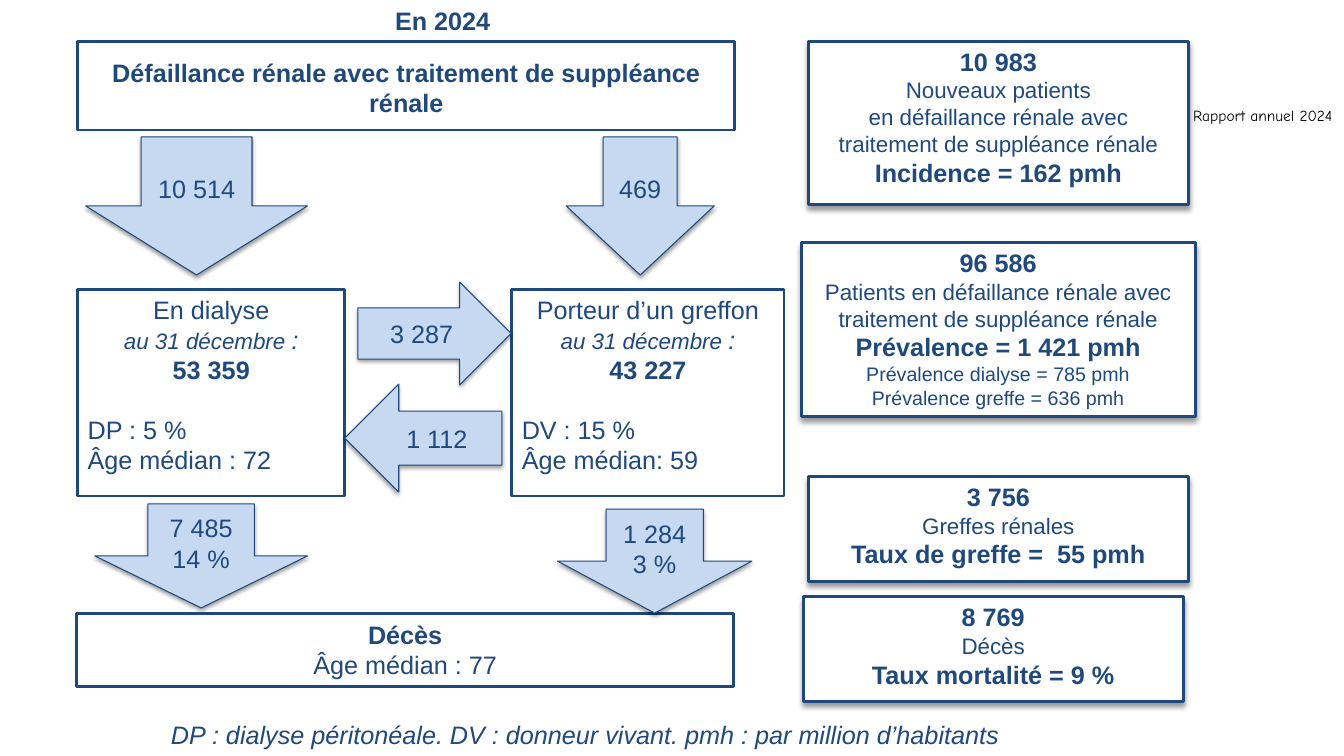
from lxml import etree
from pptx import Presentation
from pptx import util as u
from pptx.dml.color import RGBColor
from pptx.enum import shapes, text
from pptx.oxml.ns import qn

NAVY = RGBColor(0x1F, 0x49, 0x7D)
PALE = RGBColor(0xC6, 0xD9, 0xF1)
WHITE = RGBColor(0xFF, 0xFF, 0xFF)
BLACK = RGBColor(0, 0, 0)

# Run formats
BASE = dict(name="Arial", size=u.Pt(18), bold=False, italic=False)
FORMATS = {
    "plain": BASE,
    "bold": {**BASE, "bold": True},
    "italic": {**BASE, "italic": True},
    "date": {**BASE, "italic": True, "size": u.Pt(16)},
    "label": {**BASE, "size": u.Pt(16)},
    "detail": {**BASE, "size": u.Pt(14)},
    "report": {**BASE, "name": "Comic Neue", "size": u.Pt(11)},
}

# Content: places are (left, top, width, height) in cm, lines are (text, format)
TITLE = ((9.63, 0, 3.05, 1.09), "En 2024")
FOOTNOTE = ((4.06, 18.01, 23.11, 1.04),
            "DP : dialyse péritonéale. DV : donneur vivant. pmh : par million d’habitants")
REPORT = ((29.82, 2.54, 4.04, 0.74), "Rapport annuel 2024")

BANDS = [
    ((1.96, 1.04, 16.56, 2.24), 0.41,
     [("Défaillance rénale avec traitement de suppléance rénale", "bold")]),
    ((1.93, 15.47, 16.56, 1.83), 0.13,
     [("Décès", "bold"), ("Âge médian : 77", "plain")]),
]

# place, name, count on 31 December, remarks
TREATMENTS = [
    ((1.96, 7.29, 6.73, 5.21), "En dialyse", "53 359", ["DP : 5 %", "Âge médian : 72"]),
    ((12.9, 7.29, 6.86, 5.21), "Porteur d’un greffon", "43 227",
     ["DV : 15 %", "Âge médian: 59"]),
]

RIGHT, LEFT, DOWN = (shapes.MSO_SHAPE.RIGHT_ARROW, shapes.MSO_SHAPE.LEFT_ARROW,
                     shapes.MSO_SHAPE.DOWN_ARROW)
FLOWS = [
    (RIGHT, (9.02, 7.11, 3.86, 2.59), ["3 287"]),
    (LEFT, (8.69, 9.68, 3.96, 2.72), ["1 112"]),
    (DOWN, (14.27, 3.45, 3.73, 3.48), ["469"]),
    (DOWN, (2.16, 3.45, 5.59, 3.48), ["10 514"]),
    (DOWN, (14.05, 12.83, 4.9, 2.62), ["1 284", "3 %"]),
    (DOWN, (2.39, 12.7, 5.36, 2.62), ["7 485", "14 %"]),
]

# place, total, labels, rate, details
KEY_FIGURES = [
    ((20.37, 1.04, 9.58, 4.11), "10 983",
     ["Nouveaux patients", "en défaillance rénale avec traitement de suppléance rénale"],
     "Incidence = 162 pmh", []),
    ((20.19, 6.12, 9.93, 4.37), "96 586",
     ["Patients en défaillance rénale avec traitement de suppléance rénale"],
     "Prévalence = 1 421 pmh",
     ["Prévalence dialyse = 785 pmh", "Prévalence greffe = 636 pmh"]),
    ((20.37, 12.01, 9.58, 2.64), "3 756", ["Greffes rénales"],
     "Taux de greffe =  55 pmh", []),
    ((20.24, 15.04, 9.58, 2.64), "8 769", ["Décès"], "Taux mortalité = 9 %", []),
]


def cm(place):
    return [u.Cm(v) for v in place]


def write(p, runs, align=text.PP_ALIGN.CENTER, color=NAVY):
    p.alignment = align
    for words, style in runs:
        r = p.add_run()
        r.text = words
        for key, value in FORMATS[style].items():
            setattr(r.font, key, value)
        r.font.color.rgb = color


def fill_text(sp, paragraphs, anchor=text.MSO_ANCHOR.TOP, wrap=True, **look):
    tf = sp.text_frame
    tf.auto_size = text.MSO_AUTO_SIZE.NONE
    tf.word_wrap = wrap
    tf.vertical_anchor = anchor
    for i, runs in enumerate(paragraphs):
        write(tf.add_paragraph() if i else tf.paragraphs[0], runs, **look)
    return tf


def add_shadow(sp, alpha, blur, dist):
    effects = sp._element.spPr.find(qn("a:effectLst"))
    shadow = etree.SubElement(effects, qn("a:outerShdw"), blurRad=str(u.Pt(blur)),
                              dist=str(u.Pt(dist)), dir="5400000", rotWithShape="0")
    tint = etree.SubElement(shadow, qn("a:srgbClr"), val="000000")
    etree.SubElement(tint, qn("a:alpha"), val=str(alpha * 1000))


def add_box(s, place, kind=shapes.MSO_SHAPE.RECTANGLE, fill=WHITE, width=2, shadow=None):
    sp = s.shapes.add_shape(kind, *cm(place))
    sp.shadow.inherit = False
    sp.fill.solid()
    sp.fill.fore_color.rgb = fill
    sp.line.color.rgb = NAVY
    sp.line.width = u.Pt(width)
    if shadow:
        add_shadow(sp, *shadow)
    return sp


def main():
    prs = Presentation()
    prs.slide_width, prs.slide_height = u.Cm(33.87), u.Cm(19.05)
    s = prs.slides.add_slide(prs.slide_layouts[5])

    # Title
    place, words = TITLE
    title = s.shapes.title
    title.left, title.top, title.width, title.height = cm(place)
    fill_text(title, [[(words, "bold")]], wrap=False)

    # Report name and footnote
    for (place, words), style, color in ((REPORT, "report", BLACK),
                                         (FOOTNOTE, "italic", NAVY)):
        fill_text(s.shapes.add_textbox(*cm(place)), [[(words, style)]],
                  wrap=style == "italic", align=text.PP_ALIGN.LEFT, color=color)

    # Start and end bands
    for place, inset, lines in BANDS:
        tf = fill_text(add_box(s, place), [[line] for line in lines])
        tf.margin_top = u.Cm(inset)

    # Treatment boxes
    for place, name, count, remarks in TREATMENTS:
        tf = fill_text(add_box(s, place), [
            [(name, "plain")],
            [("au 31 décembre ", "date"), (":", "italic")],
            [(count, "bold")]])
        for i, remark in enumerate(remarks):
            p = tf.add_paragraph()
            write(p, [(remark, "plain")], text.PP_ALIGN.LEFT)
            p.space_before = u.Pt(0 if i else 21)

    # Flow arrows
    for kind, place, lines in FLOWS:
        sp = add_box(s, place, kind, PALE, 0.75, (38, 3.1, 1.6))
        fill_text(sp, [[(line, "plain")] for line in lines], text.MSO_ANCHOR.MIDDLE)

    # Key figures
    for place, total, labels, rate, details in KEY_FIGURES:
        lines = [(total, "bold"), *((label, "label") for label in labels),
                 (rate, "bold"), *((detail, "detail") for detail in details)]
        fill_text(add_box(s, place, shadow=(40, 4, 3)), [[line] for line in lines])

    prs.save("out.pptx")


if __name__ == "__main__":
    main()
